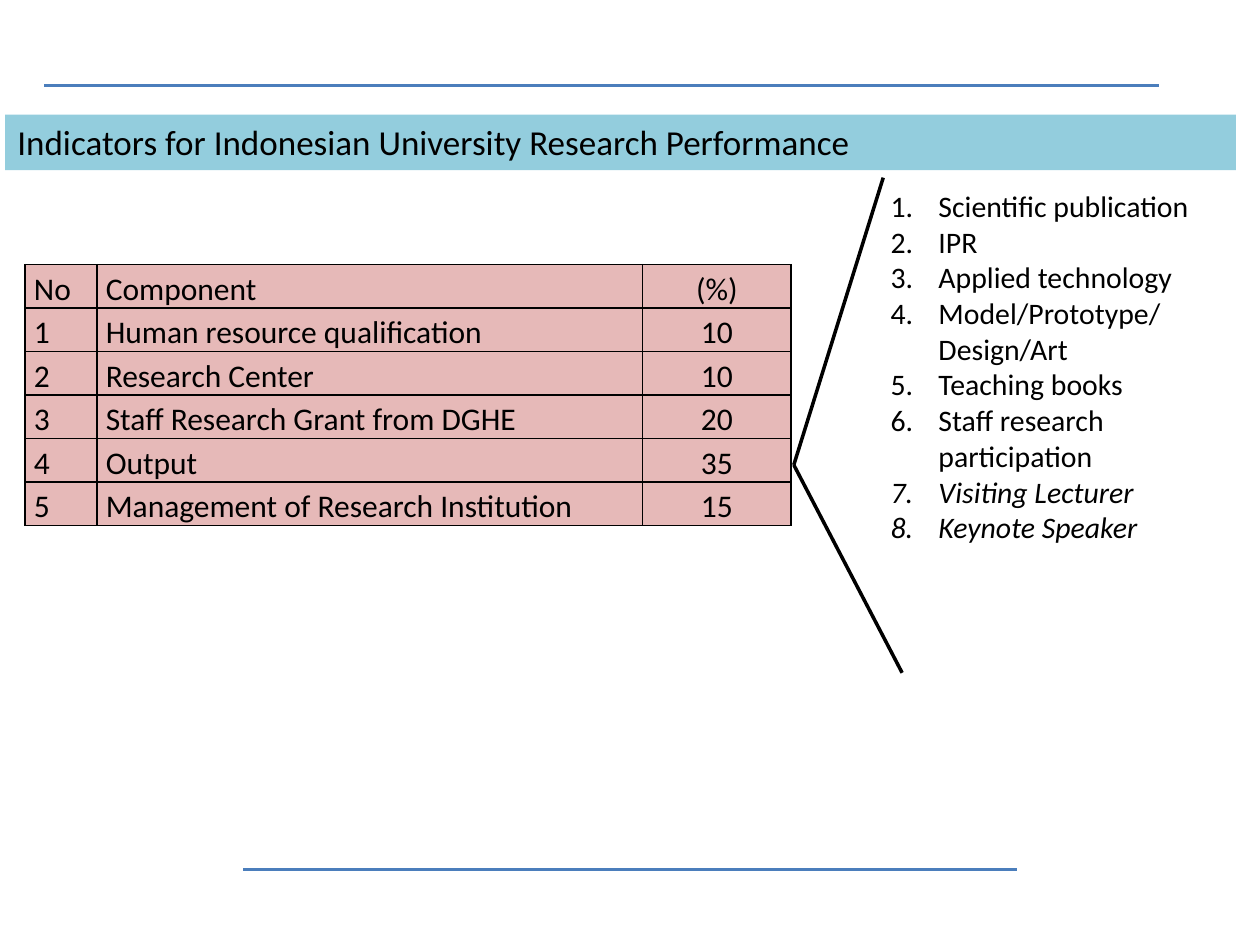
"""Builds a slide on indicators for university research performance."""
import lxml.etree
import pptx
import pptx.dml.color
import pptx.enum.shapes
import pptx.enum.text
import pptx.oxml.ns
import pptx.util

Inches = pptx.util.Inches
Pt = pptx.util.Pt
qn = pptx.oxml.ns.qn
ALIGN = pptx.enum.text.PP_ALIGN

FONT = "Calibri"
BLACK, BLUE, TEAL, PINK = "000000", "4B7EBC", "93CDDD", "E6B9B8"
COLUMN_WIDTHS = [0.57, 4.33, 1.18]
COMPONENTS = [
    ("No", "Component", "(%)"),
    ("1", "Human resource qualification", "10"),
    ("2", "Research Center", "10"),
    ("3", "Staff Research Grant from DGHE", "20"),
    ("4", "Output", "35"),
    ("5", "Management of Research Institution", "15"),
]
OUTPUTS = [
    "Scientific publication",
    "IPR",
    "Applied technology",
    "Model/Prototype/Design/Art",
    "Teaching books",
    "Staff research participation",
    "Visiting Lecturer",
    "Keynote Speaker",
]
ITALIC_OUTPUTS = OUTPUTS[-2:]


def rgb(color):
    """Return the colour for a hex string."""
    return pptx.dml.color.RGBColor.from_string(color)


def format_runs(p, size, italic=None):
    """Set font, size and colour on the runs of a paragraph."""
    for r in p.runs:
        r.font.name = FONT
        r.font.size = Pt(size)
        r.font.italic = italic
        r.font.color.rgb = rgb(BLACK)


def add_line(shapes, start, end, color):
    """Add a straight line between two points given in inches."""
    points = [Inches(v) for v in (*start, *end)]
    line = shapes.add_connector(pptx.enum.shapes.MSO_CONNECTOR.STRAIGHT, *points)
    line.line.color.rgb = rgb(color)
    line.line.width = Pt(2)
    lxml.etree.SubElement(line._element.spPr, qn("a:effectLst"))


def add_title_band(shapes, text):
    """Add the coloured band that carries the title."""
    sp = shapes.add_shape(pptx.enum.shapes.MSO_SHAPE.RECTANGLE,
                          Inches(0.04), Inches(0.91), Inches(9.77), Inches(0.44))
    sp.shadow.inherit = False
    sp.fill.solid()
    sp.fill.fore_color.rgb = rgb(TEAL)
    sp.line.fill.background()
    tf = sp.text_frame
    tf.word_wrap = True
    tf.auto_size = pptx.enum.text.MSO_AUTO_SIZE.SHAPE_TO_FIT_TEXT
    tf.vertical_anchor = pptx.enum.text.MSO_ANCHOR.TOP
    tf.text = text
    p = tf.paragraphs[0]
    p.alignment = ALIGN.LEFT
    format_runs(p, 20)


def add_borders(cell):
    """Draw a thin black border on all sides of a cell."""
    tc_pr = cell._tc.get_or_add_tcPr()
    for side in ("a:lnL", "a:lnR", "a:lnT", "a:lnB"):
        ln = lxml.etree.SubElement(tc_pr, qn(side), w=str(Pt(1)))
        fill = lxml.etree.SubElement(ln, qn("a:solidFill"))
        lxml.etree.SubElement(fill, qn("a:srgbClr"), val=BLACK)


def fill_cell(cell, text, alignment):
    """Write and format one table cell."""
    add_borders(cell)
    cell.fill.solid()
    cell.fill.fore_color.rgb = rgb(PINK)
    cell.margin_left = cell.margin_right = Inches(0.07)
    cell.margin_top = cell.margin_bottom = 0
    cell.text_frame.text = text
    p = cell.text_frame.paragraphs[0]
    p.alignment = alignment
    p.line_spacing = 1.15
    format_runs(p, 18)


def add_component_table(shapes):
    """Add the table of components and their weights."""
    table = shapes.add_table(len(COMPONENTS), len(COLUMN_WIDTHS), Inches(0.2), Inches(2.1),
                             Inches(sum(COLUMN_WIDTHS)), Inches(2.07)).table
    for column, width in zip(table.columns, COLUMN_WIDTHS):
        column.width = Inches(width)
    for i, row in enumerate(COMPONENTS):
        for j, text in enumerate(row):
            fill_cell(table.cell(i, j), text, ALIGN.CENTER if j == 2 else ALIGN.LEFT)


def add_output_list(shapes):
    """Add the numbered list of research outputs."""
    tf = shapes.add_textbox(Inches(6.97), Inches(1.44), Inches(3.03), Inches(2.96)).text_frame
    tf.word_wrap = True
    tf.auto_size = pptx.enum.text.MSO_AUTO_SIZE.SHAPE_TO_FIT_TEXT
    tf.text = "\n".join(OUTPUTS)
    for p in tf.paragraphs:
        p_pr = p._p.get_or_add_pPr()
        p_pr.set("marL", str(Inches(0.38)))
        p_pr.set("indent", str(-Inches(0.38)))
        lxml.etree.SubElement(p_pr, qn("a:buFont"), typeface="+mj-lt")
        lxml.etree.SubElement(p_pr, qn("a:buAutoNum"), type="arabicPeriod")
        format_runs(p, 17, True if p.text in ITALIC_OUTPUTS else None)


def add_output_callout(shapes):
    """Add the output list and the two lines that open from the table."""
    group = shapes.add_group_shape()
    add_output_list(group.shapes)
    for end in ((7.01, 1.41), (7.16, 5.34)):
        add_line(group.shapes, (6.3, 3.69), end, BLACK)


def main():
    """Build and save the slide."""
    prs = pptx.Presentation()
    prs.slide_width = Inches(10)
    prs.slide_height = Inches(7.5)
    s = prs.slides.add_slide(prs.slide_layouts[6])
    add_line(s.shapes, (1.93, 6.9), (8.07, 6.9), BLUE)
    add_line(s.shapes, (0.35, 0.68), (9.2, 0.68), BLUE)
    add_title_band(s.shapes, "Indicators for Indonesian University Research Performance")
    add_component_table(s.shapes)
    add_output_callout(s.shapes)
    prs.save("out.pptx")


if __name__ == "__main__":
    main()
